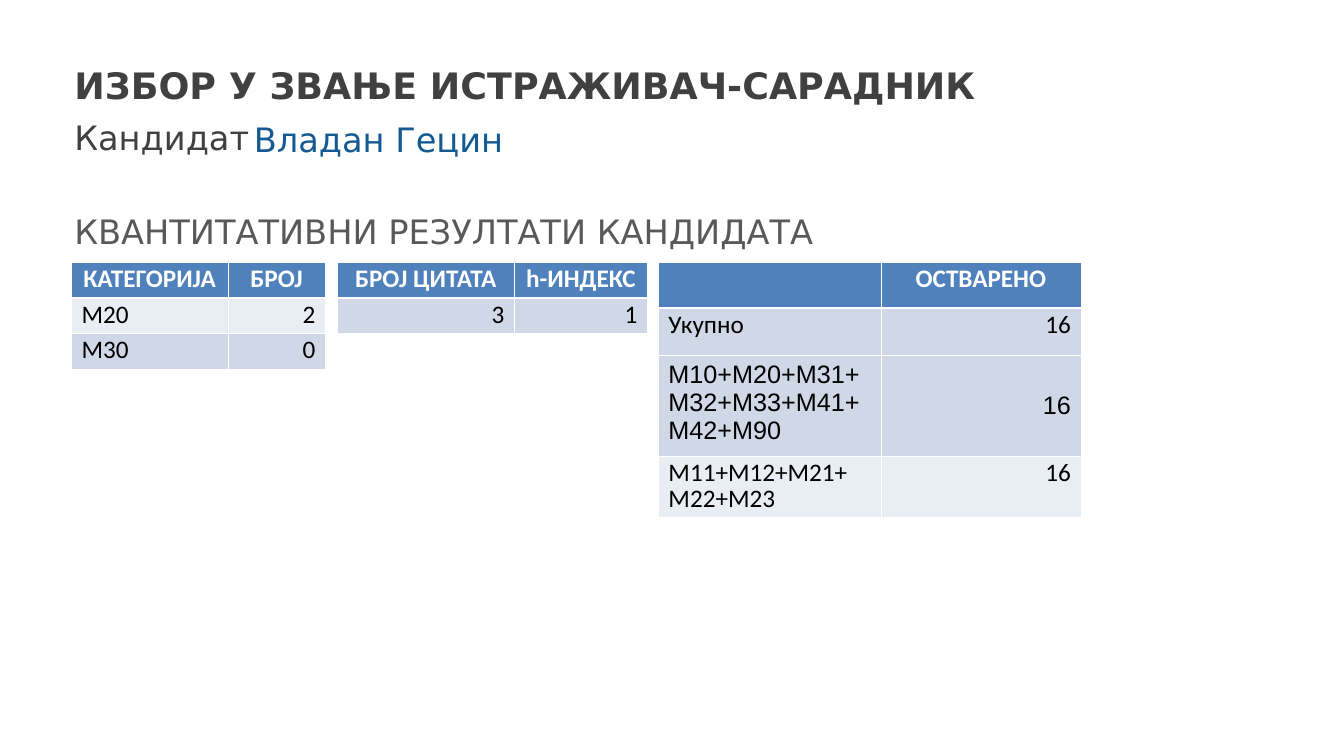
from lxml import etree
from pptx import Presentation
from pptx.dml.color import RGBColor
from pptx.enum.text import MSO_ANCHOR, MSO_AUTO_SIZE, PP_ALIGN
from pptx.oxml.ns import qn
from pptx.util import Pt

LEFT, CENTER, RIGHT = PP_ALIGN.LEFT, PP_ALIGN.CENTER, PP_ALIGN.RIGHT
TOP, MIDDLE, BOTTOM = MSO_ANCHOR.TOP, MSO_ANCHOR.MIDDLE, MSO_ANCHOR.BOTTOM
NO_AUTOFIT = MSO_AUTO_SIZE.NONE

HEADER, BAND_DARK, BAND_LIGHT = "4F81BD", "D0D8E8", "E9EDF4"
WHITE, BLACK = "FFFFFF", "000000"
THIN, THICK = 0.45, 1.47
TABLE_TOP, ROW_HEIGHT = 187.2, 25.2


def color(hex_code):
    return RGBColor.from_string(hex_code)


def write(frame, text, size=18, font="Calibri", ink=BLACK, bold=False,
          align=LEFT, spacing=1.0, after=0):
    paragraph = frame.paragraphs[0]
    paragraph.alignment = align
    paragraph.line_spacing = spacing
    paragraph.space_after = Pt(after)
    run = paragraph.add_run()
    run.text = text
    run.font.size = Pt(size)
    run.font.name = font
    run.font.bold = bold
    run.font.color.rgb = color(ink)


def place_line(shape, box, text, anchor=TOP, **text_format):
    shape.left, shape.top, shape.width, shape.height = (Pt(v) for v in box)
    frame = shape.text_frame
    frame.word_wrap = True
    frame.auto_size = NO_AUTOFIT
    frame.vertical_anchor = anchor
    write(frame, text, font="DejaVu Sans", **text_format)


def add_headings(slide, box):
    left, top, width, height = box
    place_line(slide.shapes.title, (left, top, width, 41),
               "ИЗБОР У ЗВАЊЕ ИСТРАЖИВАЧ-САРАДНИК",
               anchor=BOTTOM, size=26, ink="404040", bold=True)
    lines = [
        ((left, top + 41, width, 36), "Кандидат", TOP, "404040", 1.0, 0),
        ((left + 128.2, top + 41.7, 486, 34.6), "Владан Гецин", MIDDLE,
         "145991", 1.1, 6),
        ((left, top + height - 41, width, 41),
         "КВАНТИТАТИВНИ РЕЗУЛТАТИ КАНДИДАТА", BOTTOM, "595959", 1.0, 0),
    ]
    for line_box, text, anchor, ink, spacing, after in lines:
        place_line(slide.shapes.add_textbox(0, 0, 0, 0), line_box, text,
                   anchor=anchor, size=24, ink=ink, spacing=spacing, after=after)


def set_borders(cell, top, bottom):
    properties = cell._tc.get_or_add_tcPr()
    edges = [("a:lnL", THIN), ("a:lnR", THIN), ("a:lnT", top), ("a:lnB", bottom)]
    for position, (tag, weight) in enumerate(edges):
        edge = etree.Element(qn(tag), w=str(Pt(weight)))
        fill = etree.SubElement(edge, qn("a:solidFill"))
        etree.SubElement(fill, qn("a:srgbClr"), val=WHITE)
        properties.insert(position, edge)


def add_results(slide, left, widths, heights, rows, bands, thick_rows=1, arial_row=None):
    table = slide.shapes.add_table(
        len(rows), len(widths), Pt(left), Pt(TABLE_TOP),
        Pt(sum(widths)), Pt(sum(heights))).table
    for column, width in zip(table.columns, widths):
        column.width = Pt(width)
    for r, values in enumerate(rows):
        table.rows[r].height = Pt(heights[r])
        for c, value in enumerate(values):
            cell = table.cell(r, c)
            cell.fill.solid()
            cell.fill.fore_color.rgb = color(bands[r])
            set_borders(cell, THICK if 0 < r <= thick_rows else THIN,
                        THICK if r < thick_rows else THIN)
            is_header, is_arial, is_number = r == 0, r == arial_row, value.isdigit()
            if is_arial and is_number:
                cell.vertical_anchor = MIDDLE
            write(cell.text_frame, value,
                  font="Arial" if is_arial else "Calibri",
                  ink=WHITE if is_header else BLACK, bold=is_header,
                  align=CENTER if is_header else RIGHT if is_number else LEFT,
                  spacing=1.0 if is_arial else 0.83)


def main():
    deck = Presentation()
    deck.slide_width, deck.slide_height = Pt(960), Pt(540)
    slide = deck.slides.add_slide(deck.slide_layouts[5])
    add_headings(slide, (46, 39, 868, 144))
    add_results(slide, 470.3, (159, 142.8), (33, 33.7, 72, 43.5),
                [("", "ОСТВАРЕНО"),
                 ("Укупно", "16"),
                 ("M10+M20+M31+M32+M33+M41+M42+M90", "16"),
                 ("М11+М12+М21+ M22+M23", "16")],
                (HEADER, BAND_DARK, BAND_DARK, BAND_LIGHT),
                thick_rows=2, arial_row=2)
    add_results(slide, 51.1, (111.6, 69.8), [ROW_HEIGHT] * 3,
                [("КАТЕГОРИЈА", "БРОЈ"), ("М20", "2"), ("М30", "0")],
                (HEADER, BAND_LIGHT, BAND_DARK))
    add_results(slide, 240.8, (126.7, 95), [ROW_HEIGHT] * 2,
                [("БРОЈ ЦИТАТА", "h-ИНДЕКС"), ("3", "1")],
                (HEADER, BAND_DARK))
    deck.save("out.pptx")


if __name__ == "__main__":
    main()
